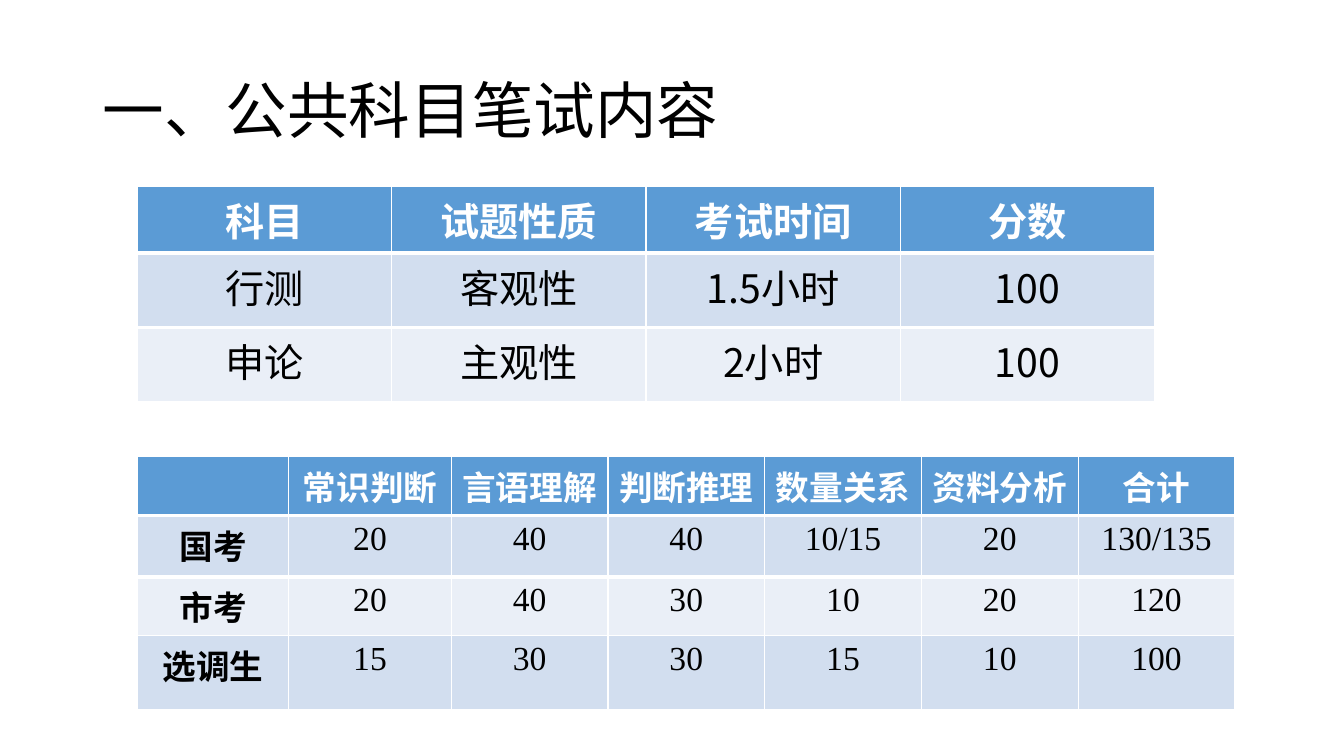
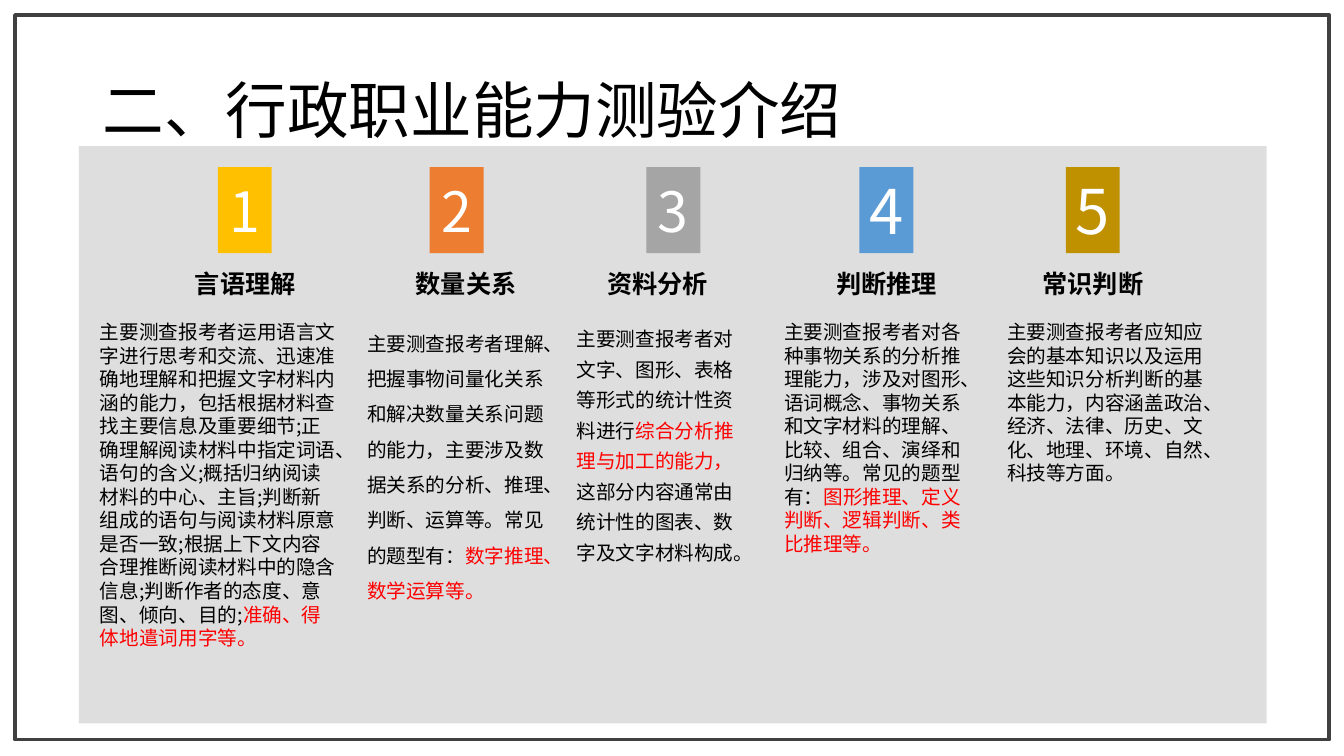
from collections import namedtuple

from lxml import etree
from pptx import Presentation
from pptx.dml.color import RGBColor
from pptx.enum.shapes import MSO_SHAPE
from pptx.enum.text import MSO_ANCHOR, MSO_AUTO_SIZE, PP_ALIGN
from pptx.oxml.ns import qn
from pptx.util import Cm, Pt

RECT = MSO_SHAPE.RECTANGLE
LEFT, CENTER = PP_ALIGN.LEFT, PP_ALIGN.CENTER
TOP, MIDDLE = MSO_ANCHOR.TOP, MSO_ANCHOR.MIDDLE
NO_AUTOFIT = MSO_AUTO_SIZE.NONE

BLACK = RGBColor(0x00, 0x00, 0x00)
WHITE = RGBColor(0xFF, 0xFF, 0xFF)
RED = RGBColor(0xFF, 0x00, 0x00)
DARK = RGBColor(0x40, 0x40, 0x40)
PANEL = RGBColor(0xBF, 0xBF, 0xBF)
BLUE = RGBColor(0x5B, 0x9B, 0xD5)
BAND_ODD = RGBColor(0xD2, 0xDE, 0xEF)
BAND_EVEN = RGBColor(0xEA, 0xEF, 0xF7)
GOLD = RGBColor(0xFF, 0xC0, 0x00)
ORANGE = RGBColor(0xED, 0x7D, 0x31)
GRAY = RGBColor(0xA5, 0xA5, 0xA5)
OCHRE = RGBColor(0xBF, 0x90, 0x00)

SANS = "Noto Sans CJK SC"
SERIF = "Times New Roman"

Box = namedtuple("Box", "x y w h")
Topic = namedtuple(
    "Topic", "name color size badge_x name_x body_x body_w body_h spacing runs")

SUBJECTS = [
    ["科目", "试题性质", "考试时间", "分数"],
    ["行测", "客观性", "1.5小时", "100"],
    ["申论", "主观性", "2小时", "100"],
]
SCORES = [
    ["", "常识判断", "言语理解", "判断推理", "数量关系", "资料分析", "合计"],
    ["国考", "20", "40", "40", "10/15", "20", "130/135"],
    ["市考", "20", "40", "30", "10", "20", "120"],
    ["选调生", "15", "30", "30", "15", "10", "100"],
]
TOPICS = [
    Topic("言语理解", GOLD, 39.6, 3.5, 1.78, 0.28, 6.58, 7.98, 1.0, [
        ("主要测查报考者运用语言文字进行思考和交流、迅速准确地理解和把握文字材料内涵的能力，"
         "包括根据材料查找主要信息及重要细节;正确理解阅读材料中指定词语、语句的含义;"
         "概括归纳阅读材料的中心、主旨;判断新组成的语句与阅读材料原意是否一致;"
         "根据上下文内容合理推断阅读材料中的隐含信息;判断作者的态度、意图、倾向、目的;", BLACK),
        ("准确、得体地遣词用字等。", RED)]),
    Topic("数量关系", ORANGE, 39.6, 8.84, 7.34, 7.01, 5.31, 6.68, 1.5, [
        ("主要测查报考者理解、把握事物间量化关系和解决数量关系问题的能力，"
         "主要涉及数据关系的分析、推理、判断、运算等。常见的题型有：", BLACK),
        ("数字推理、数学运算等。", RED)]),
    Topic("资料分析", GRAY, 39.6, 14.3, 12.17, 12.29, 4.83, 6.7, 1.3, [
        ("主要测查报考者对文字、图形、表格等形式的统计性资料进行", BLACK),
        ("综合分析推理与加工的能力，", RED),
        ("这部分内容通常由统计性的图表、数字及文字材料构成。", BLACK)]),
    Topic("判断推理", BLUE, 44, 19.67, 17.94, 17.52, 5.23, 6.68, 1.0, [
        ("主要测查报考者对各种事物关系的分析推理能力，涉及对图形、语词概念、"
         "事物关系和文字材料的理解、比较、组合、演绎和归纳等。常见的题型有：", BLACK),
        ("图形推理、定义判断、逻辑判断、类比推理等。", RED)]),
    Topic("常识判断", OCHRE, 44, 24.87, 23.14, 23.14, 5.94, 7.98, 1.0, [
        ("主要测查报考者应知应会的基本知识以及运用这些知识分析判断的基本能力，"
         "内容涵盖政治、经济、法律、历史、文化、地理、环境、自然、科技等方面。", BLACK)]),
]


def style(p, size, color=None, bold=False, align=LEFT, name=SANS):
    p.alignment = align
    font = p.font
    font.name, font.size, font.bold = name, Pt(size), bold
    if color is not None:
        font.color.rgb = color
    latin = p._p.pPr.find(qn("a:defRPr")).find(qn("a:latin"))
    ea = etree.Element(qn("a:ea"), typeface=SANS)
    latin.addnext(ea)


def place(sp, box):
    sp.left, sp.top, sp.width, sp.height = (Cm(v) for v in box)


def add_title_slide(prs, title):
    slide = prs.slides.add_slide(prs.slide_layouts[5])
    sp = slide.shapes.title
    place(sp, Box(2.33, 1.02, 29.21, 3.68))
    tf = sp.text_frame
    tf.text = title
    tf.auto_size = NO_AUTOFIT
    tf.vertical_anchor = MIDDLE
    p = tf.paragraphs[0]
    style(p, 44, BLACK)
    p.line_spacing = 0.9
    return slide


def add_rect(slide, box, fill=None, line=None, alpha=None):
    sp = slide.shapes.add_shape(RECT, *(Cm(v) for v in box))
    sp.shadow.inherit = False
    if fill is None:
        sp.fill.background()
    else:
        sp.fill.solid()
        sp.fill.fore_color.rgb = fill
        if alpha is not None:
            clr = sp._element.spPr.find(qn("a:solidFill"))[0]
            etree.SubElement(clr, qn("a:alpha"), val=str(alpha * 1000))
    if line is None:
        sp.line.fill.background()
    else:
        sp.line.color.rgb = line
        sp.line.width = Pt(2.63)
    return sp


def add_text(slide, box, anchor):
    tf = slide.shapes.add_textbox(*(Cm(v) for v in box)).text_frame
    tf.word_wrap = True
    tf.vertical_anchor = anchor
    return tf


def add_border(cell, side, width):
    ln = etree.Element(qn("a:" + side), w=str(Pt(width)))
    fill = etree.SubElement(ln, qn("a:solidFill"))
    etree.SubElement(fill, qn("a:srgbClr"), val=str(WHITE))
    cell._tc.get_or_add_tcPr().insert(0, ln)


def add_grid(slide, box, rows, widths, heights, size, row_heads=False):
    shape = slide.shapes.add_table(
        len(rows), len(widths), *(Cm(v) for v in box))
    table = shape.table
    for col, width in zip(table.columns, widths):
        col.width = Cm(width)
    for i, (values, height) in enumerate(zip(rows, heights)):
        table.rows[i].height = Cm(height)
        header = i == 0
        fill = BLUE if header else BAND_ODD if i % 2 else BAND_EVEN
        for j, value in enumerate(values):
            cell = table.cell(i, j)
            cell.fill.solid()
            cell.fill.fore_color.rgb = fill
            if i < 2:
                add_border(cell, "lnB" if header else "lnT", 3)
            cell.text = value
            head = header or (row_heads and j == 0)
            name = SERIF if row_heads and not head else SANS
            style(cell.text_frame.paragraphs[0], size,
                  WHITE if header else BLACK, head, CENTER, name)


def add_topic(slide, panel, number, topic):
    badge = add_rect(
        slide, Box(panel.x + topic.badge_x, panel.y + 0.53, 1.36, 2.17),
        topic.color)
    tf = badge.text_frame
    tf.margin_left = tf.margin_right = tf.margin_top = tf.margin_bottom = 0
    tf.vertical_anchor = MIDDLE
    tf.text = str(number)
    style(tf.paragraphs[0], topic.size, WHITE, align=CENTER)

    tf = add_text(
        slide, Box(panel.x + topic.name_x, panel.y + 2.69, 4.83, 1.57), MIDDLE)
    tf.text = topic.name
    style(tf.paragraphs[0], 18, BLACK, True, CENTER)

    tf = add_text(slide, Box(panel.x + topic.body_x, panel.y + 4.26,
                             topic.body_w, topic.body_h), TOP)
    p = tf.paragraphs[0]
    style(p, 14)
    p.line_spacing = topic.spacing
    for text, color in topic.runs:
        r = p.add_run()
        r.text = text
        r.font.color.rgb = color


def build_exam_content(prs):
    slide = add_title_slide(prs, "一、公共科目笔试内容")
    add_grid(slide, Box(3.46, 4.7, 25.64, 5.39), SUBJECTS,
             [6.41] * 4, [1.65, 1.87, 1.87], 28)
    add_grid(slide, Box(3.46, 11.51, 27.66, 6.37), SCORES,
             [3.82, 4.09] + [3.95] * 5, [1.48, 1.54, 1.48, 1.87], 24,
             row_heads=True)


def build_aptitude_test(prs):
    slide = add_title_slide(prs, "二、行政职业能力测验介绍")
    add_rect(slide, Box(0.38, 0.38, 33.12, 18.26), line=DARK)
    panel = Box(1.99, 3.68, 29.93, 14.55)
    add_rect(slide, panel, PANEL, alpha=50)
    for number, topic in enumerate(TOPICS, 1):
        add_topic(slide, panel, number, topic)
    tree = slide.shapes._spTree
    tree.append(slide.shapes.title._element)


def main():
    prs = Presentation()
    prs.slide_width, prs.slide_height = Cm(33.87), Cm(19.05)
    build_exam_content(prs)
    build_aptitude_test(prs)
    prs.save("out.pptx")


if __name__ == "__main__":
    main()
